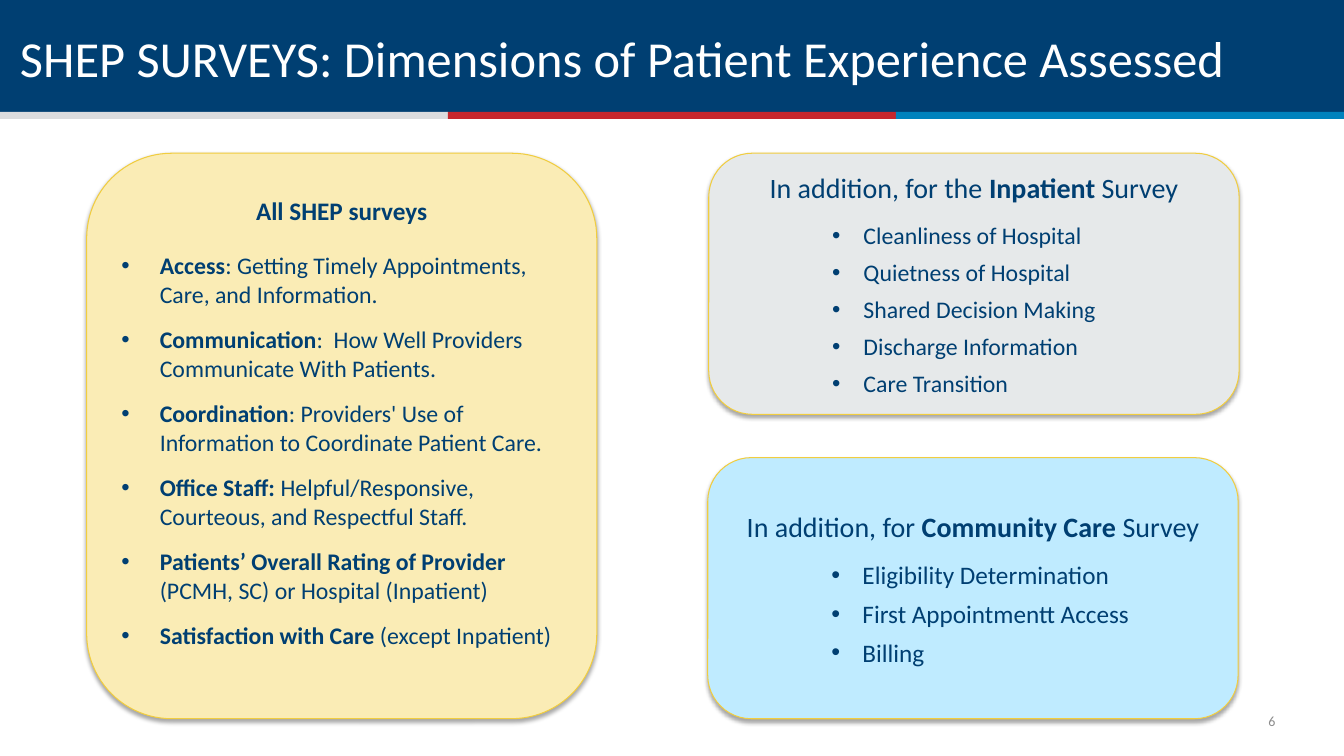
from lxml import etree
from pptx import Presentation
from pptx.dml.color import RGBColor
from pptx.enum import shapes, text
from pptx.oxml import ns
from pptx.util import Inches, Pt

COLORS = {
    "navy": "003F72", "silver": "DBDCDE", "red": "C6262D", "blue": "0082BD",
    "white": "FFFFFF", "gray": "8C8C8C", "gold": "F1CD3F", "cream": "FAECB5",
    "mist": "E6E9EA", "sky": "BFEBFF", "black": "000000",
}
FONT = "Calibri"
WIDE = 13.33
LEFT, RIGHT, MID = (text.PP_ALIGN.LEFT, text.PP_ALIGN.RIGHT,
                    text.PP_ALIGN.CENTER)

SHARED = [
    "*Access*: Getting Timely Appointments, Care, and Information.",
    "*Communication*:  How Well Providers Communicate With Patients.",
    "*Coordination*: Providers' Use of Information to Coordinate Patient Care.",
    "*Office Staff: *Helpful/Responsive, Courteous, and Respectful Staff.",
    "*Patients’ Overall Rating of Provider *(PCMH, SC) or Hospital (Inpatient)",
    "*Satisfaction with Care *(except Inpatient)",
]
INPATIENT = ["Cleanliness of Hospital", "Quietness of Hospital",
             "Shared Decision Making", "Discharge Information",
             "Care Transition"]
COMMUNITY = ["Eligibility Determination", "First Appointmentt Access",
             "Billing"]


def rgb(name):
    return RGBColor.from_string(COLORS[name])


def add_box(slide, kind, area, fill):
    box = slide.shapes.add_shape(kind, *map(Inches, area))
    box.shadow.inherit = False
    box.fill.solid()
    box.fill.fore_color.rgb = rgb(fill)
    box.line.fill.background()
    return box


def add_shade(box):
    effects = box._element.spPr.find(ns.qn("a:effectLst"))
    shade = etree.SubElement(effects, ns.qn("a:outerShdw"),
                             blurRad=str(Pt(3.1)), dist=str(Pt(1.8)),
                             dir="5400000", rotWithShape="0")
    tint = etree.SubElement(shade, ns.qn("a:srgbClr"), val=COLORS["black"])
    etree.SubElement(tint, ns.qn("a:alpha"), val="35000")


def write(para, words, size, color, align=LEFT, before=0, after=0, indent=None):
    para.alignment = align
    para.space_before, para.space_after = Pt(before), Pt(after)
    if indent:
        left, hang = indent
        props = para._p.get_or_add_pPr()
        props.set("marL", str(Inches(left)))
        props.set("indent", str(-Inches(hang)))
        etree.SubElement(props, ns.qn("a:buFont"), typeface="Arial")
        etree.SubElement(props, ns.qn("a:buChar"), char="•")
    font = para.font
    font.name, font.size = FONT, Pt(size)
    font.color.rgb = rgb(color)
    for index, part in enumerate(words.split("*")):
        if part:
            run = para.add_run()
            run.text = part
            run.font.bold = index % 2 == 1


def add_label(slide, area, words, size, color, align=LEFT):
    frame = slide.shapes.add_textbox(*map(Inches, area)).text_frame
    frame.word_wrap = True
    write(frame.paragraphs[0], words, size, color, align)
    return frame


def add_card(slide, area, fill, title, head, items, size, indent,
             first=12, after=0, foot=0.05):
    box = add_box(slide, shapes.MSO_SHAPE.ROUNDED_RECTANGLE, area, fill)
    box.line.color.rgb = rgb("gold")
    box.line.width = Pt(0.75)
    add_shade(box)
    frame = box.text_frame
    frame.word_wrap = True
    frame.vertical_anchor = text.MSO_ANCHOR.MIDDLE
    frame.margin_bottom = Inches(foot)
    write(frame.paragraphs[0], title, head, "navy", MID, after=after * 2)
    for index, item in enumerate(items):
        last = index == len(items) - 1
        write(frame.add_paragraph(), item, size, "navy",
              before=6 if index else first, after=0 if last else after,
              indent=indent)


def add_header(slide):
    rect = shapes.MSO_SHAPE.RECTANGLE
    add_box(slide, rect, (0, 0, WIDE, 1.14), "navy")
    third = WIDE / 3
    for index, color in enumerate(("silver", "red", "blue")):
        add_box(slide, rect, (index * third, 1.11, third, 0.07), color)
    add_label(slide, (0.1, 0.22, 12.56, 0.89),
              "SHEP SURVEYS: Dimensions of Patient Experience Assessed",
              36, "white")


def add_number(slide):
    frame = add_label(slide, (12.29, 6.95, 0.36, 0.4), "6", 10, "gray", RIGHT)
    frame.margin_left = frame.margin_right = 0
    frame.margin_top = frame.margin_bottom = 0
    frame.vertical_anchor = text.MSO_ANCHOR.MIDDLE


def main():
    deck = Presentation()
    deck.slide_width, deck.slide_height = Inches(WIDE), Inches(7.5)
    slide = deck.slides.add_slide(deck.slide_layouts[6])
    add_header(slide)
    add_number(slide)
    add_card(slide, (0.86, 1.52, 5.06, 5.61), "cream", "*All SHEP surveys*",
             18, SHARED, 17, (0.38, 0.38), first=6, after=6, foot=0.32)
    add_card(slide, (7.03, 1.52, 5.26, 2.59), "mist",
             "In addition, for the *Inpatient* Survey",
             20, INPATIENT, 17, (1.31, 0.31))
    add_card(slide, (7.02, 4.54, 5.26, 2.59), "sky",
             "In addition, for *Community Care *Survey",
             20, COMMUNITY, 18, (1.31, 0.31))
    deck.save("out.pptx")


if __name__ == "__main__":
    main()
